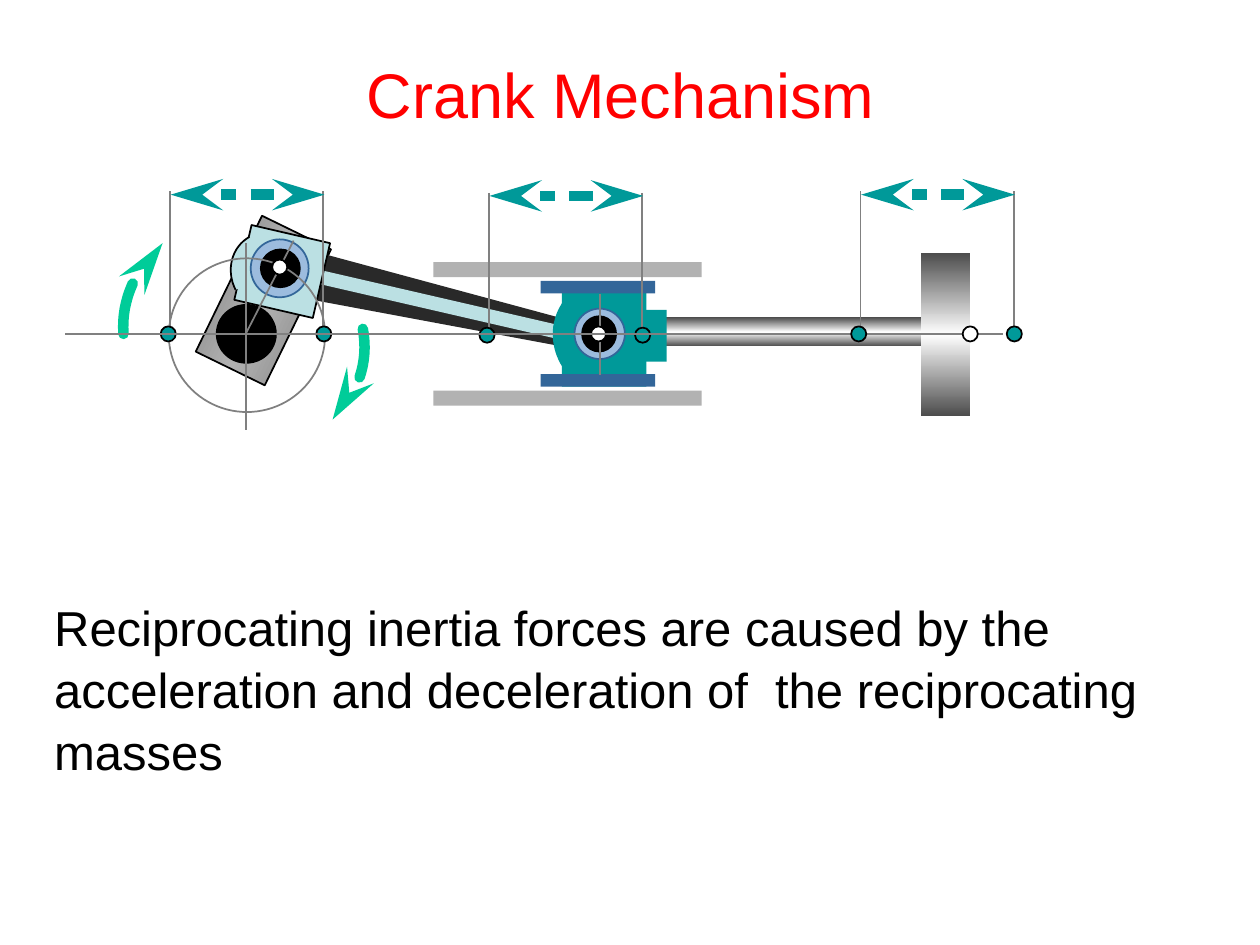
from dataclasses import dataclass

from pptx import Presentation
from pptx import util as u
from pptx.dml.color import RGBColor
from pptx.enum import shapes, text
from pptx.oxml import parse_xml
from pptx.oxml.ns import nsdecls, qn

COLORS = {
    "title": "FF0000", "black": "000000", "white": "FFFFFF", "teal": "009999",
    "green": "00CC99", "gray": "808080", "guide": "B2B2B2", "web": "7C7C7C",
    "steel": "4D4D4D", "beam": "292929", "pale": "BBE0E3", "bearing": "9CBCDE",
    "blue": "336699",
}
CELL = u.Inches(0.1)
RECT = shapes.MSO_SHAPE.RECTANGLE
OVAL = shapes.MSO_SHAPE.OVAL


@dataclass
class Box:
    x: float
    y: float
    w: float
    h: float

    def point(self, x, y):
        return round((self.x + x) * CELL), round((self.y + y) * CELL)

    def frame(self, x, y, w, h):
        return *self.point(x, y), round(w * CELL), round(h * CELL)


def rgb(name):
    return RGBColor.from_string(COLORS[name])


def paint(sp, fill=None, line=None, width=1):
    sp.shadow.inherit = False
    if fill:
        sp.fill.solid()
        sp.fill.fore_color.rgb = rgb(fill)
    else:
        sp.fill.background()
    if line:
        sp.line.color.rgb = rgb(line)
        sp.line.width = u.Pt(width)
    else:
        sp.line.fill.background()


def add_part(s, box, kind, frame, fill=None, line=None, angle=0):
    sp = s.shapes.add_shape(kind, *box.frame(*frame))
    paint(sp, fill, line)
    sp.rotation = angle
    return sp


def add_metal(s, box, frame, edge, middle, line=None, angle=0):
    sp = add_part(s, box, RECT, frame, edge, line, angle)
    stops = "".join(
        f'<a:gs pos="{pos}"><a:srgbClr val="{COLORS[name]}"/></a:gs>'
        for pos, name in ((0, edge), (50000, middle), (100000, edge)))
    grad = parse_xml(
        f'<a:gradFill {nsdecls("a")} rotWithShape="1"><a:gsLst>{stops}</a:gsLst>'
        '<a:lin ang="5400000" scaled="0"/></a:gradFill>')
    props = sp._element.spPr
    props.replace(props.find(qn("a:solidFill")), grad)


def add_dot(s, box, x, y, fill):
    add_part(s, box, OVAL, (x - 0.6, y - 0.6, 1.2, 1.2), fill, "black")


def add_arrowhead(sp):
    ln = sp.line._get_or_add_ln()
    ln.append(parse_xml(
        f'<a:tailEnd {nsdecls("a")} type="stealth" w="med" len="lg"/>'))


def add_rule(s, box, start, end, color="gray", width=1, arrow=False):
    sp = s.shapes.add_connector(
        shapes.MSO_CONNECTOR.STRAIGHT, *box.point(*start), *box.point(*end))
    sp.line.color.rgb = rgb(color)
    sp.line.width = u.Pt(width)
    if arrow:
        add_arrowhead(sp)
    sp._element.spPr.append(parse_xml(f'<a:effectLst {nsdecls("a")}/>'))


def curve(p0, p1, p2, p3, steps=16):
    def blend(t, a, b, c, d):
        v = 1 - t
        return a * v**3 + 3 * b * t * v**2 + 3 * c * t**2 * v + d * t**3

    return [tuple(blend(i / steps, *axis) for axis in zip(p0, p1, p2, p3))
            for i in range(steps + 1)]


def add_outline(s, box, points, fill=None, line=None, width=1):
    pts = [box.point(*p) for p in points]
    builder = s.shapes.build_freeform(*pts[0])
    builder.add_line_segments(pts[1:], close=bool(fill))
    sp = builder.convert_to_shape()
    paint(sp, fill, line, width)
    return sp


def add_turn_arrow(s, box, points):
    sp = add_outline(s, box, curve(*points), line="green", width=6)
    sp.line._get_or_add_ln().set("cap", "rnd")
    add_arrowhead(sp)


def add_crank(s, box):
    add_metal(s, box, (1.5, 0.3, 12, 6.1), "web", "guide", "black", 116)
    add_part(s, box, OVAL, (3.8, 3.7, 4.7, 4.6), "black", "black")


def add_crank_path(s, box):
    add_rule(s, box, (9.9, -1.4), (6.1, 6))
    add_part(s, box, OVAL, (0, 0, box.w, box.h), line="gray")
    add_rule(s, box, (6.1, -1.2), (6.1, 13.6))
    add_dot(s, box, 8.8, 0.7, "white")


def add_connecting_rod(s, box):
    add_outline(s, box, [(2.8, 4.5), (28, 9.2), (28.5, 7.2), (3.7, 0.5)], "beam")
    add_part(s, box, RECT, (2.9, 4.8, 25.7, 1.1), "pale", angle=13)
    add_part(s, box, RECT, (1.5, 0, 6.4, 6.1), "pale", "black", 13)
    cap = curve((1, 4.5), (0.2, 2.9), (0.7, 1.1), (2.1, 0.3))
    add_outline(s, box, cap + [(4.4, 3)], "pale")
    add_outline(s, box, cap, line="black")
    add_part(s, box, OVAL, (2.2, 0.5, 4.6, 4.6), "bearing", "blue")
    add_part(s, box, OVAL, (3, 1.3, 3.1, 3), "black", "black")


def add_crosshead(s, box):
    for y in (0, box.h - 1.2):
        add_part(s, box, RECT, (0, y, box.w, 1.2), "guide")
    add_part(s, box, RECT, (10.2, 1.8, 6.7, 8.1), "teal")
    side = curve((10.5, 8.7), (9.2, 7), (9.1, 4.7), (10.4, 3))
    add_outline(s, box, side + [(14.3, 6)], "teal")
    for y in (1.5, 8.9):
        add_part(s, box, RECT, (8.5, y, 9.1, 1), "blue")
    add_part(s, box, RECT, (16.3, 3.8, 2.2, 4.1), "teal")
    add_part(s, box, OVAL, (11.2, 3.7, 4, 4), "bearing", "blue")
    add_part(s, box, OVAL, (11.8, 4.3, 2.7, 2.8), "black", "black")
    add_rule(s, box, (13.2, 2.5), (13.2, 9))
    add_dot(s, box, 13.1, 5.7, "white")


def add_piston(s, box):
    add_metal(s, box, (0, 5.1, 23.1, 2.3), "steel", "white")
    add_metal(s, box, (20.7, 0, 3.9, box.h), "steel", "white")


def add_stroke(s, box):
    for x in (0, box.w):
        add_rule(s, box, (x, 0), (x, box.h))
    for start, end in ((6.4, 12.25), (5.25, 0.05)):
        add_rule(s, box, (start, 0.25), (end, 0.25), "teal", 6, True)
    for x in (-0.15, box.w + 0.05):
        add_dot(s, box, x, box.h, "teal")


def add_centre_line(s, box):
    add_rule(s, box, (0, 0), (box.w, 0))


def fill_placeholder(sp, box, words, size, color, spacing, align, anchor):
    sp.left, sp.top, sp.width, sp.height = box.frame(0, 0, box.w, box.h)
    tf = sp.text_frame
    tf.word_wrap = True
    tf.auto_size = text.MSO_AUTO_SIZE.NONE
    tf.vertical_anchor = anchor
    tf.margin_left = tf.margin_right = u.Inches(0.1)
    tf.margin_top = tf.margin_bottom = u.Inches(0.05)
    p = tf.paragraphs[0]
    props = p._p.get_or_add_pPr()
    props.set("marL", "0")
    props.set("indent", "0")
    props.append(parse_xml(f'<a:buNone {nsdecls("a")}/>'))
    p.alignment = align
    p.line_spacing = spacing
    p.space_before = u.Pt(0)
    r = p.add_run()
    r.text = words
    r.font.name = "Arial"
    r.font.size = u.Pt(size)
    r.font.color.rgb = rgb(color)


def build_slide(prs):
    s = prs.slides.add_slide(prs.slide_layouts[1])
    fill_placeholder(s.shapes.title, Box(2.7, 3.6, 93.1, 6.4), "Crank Mechanism",
                     36, "title", 1.2, text.PP_ALIGN.CENTER, text.MSO_ANCHOR.MIDDLE)
    fill_placeholder(s.placeholders[1], Box(3.3, 46.7, 93.4, 15.9),
                     "Reciprocating inertia forces are caused by the acceleration "
                     "and deceleration of  the reciprocating masses",
                     28, "black", 1.05, text.PP_ALIGN.LEFT, text.MSO_ANCHOR.TOP)
    crank = Box(13.4, 20.5, 12.4, 12.2)
    add_turn_arrow(s, crank, [(15.4, 5.6), (15.9, 8.3), (15, 10.8), (13, 12.8)])
    add_piston(s, Box(52.4, 20.1, 24.6, 12.9))
    add_crank(s, crank)
    add_connecting_rod(s, Box(17.7, 18.5, 28.5, 9.6))
    add_turn_arrow(s, crank, [(-3.6, 6), (-3.8, 3.3), (-2.6, 0.7), (-0.5, -1.2)])
    add_crank_path(s, crank)
    add_crosshead(s, Box(34.4, 20.8, 21.3, 11.4))
    strokes = [Box(x, y, 12.15, 11.3)
               for x, y in ((13.5, 15.2), (38.8, 15.3), (68.3, 15.2))]
    for box in strokes[:2]:
        add_stroke(s, box)
    axis = Box(5.2, 26.5, 74.4, 0)
    add_centre_line(s, axis)
    add_stroke(s, strokes[2])
    add_dot(s, axis, 71.8, 0, "white")


def main():
    prs = Presentation()
    prs.slide_width, prs.slide_height = u.Inches(10), u.Inches(7.5)
    build_slide(prs)
    prs.save("out.pptx")


if __name__ == "__main__":
    main()
